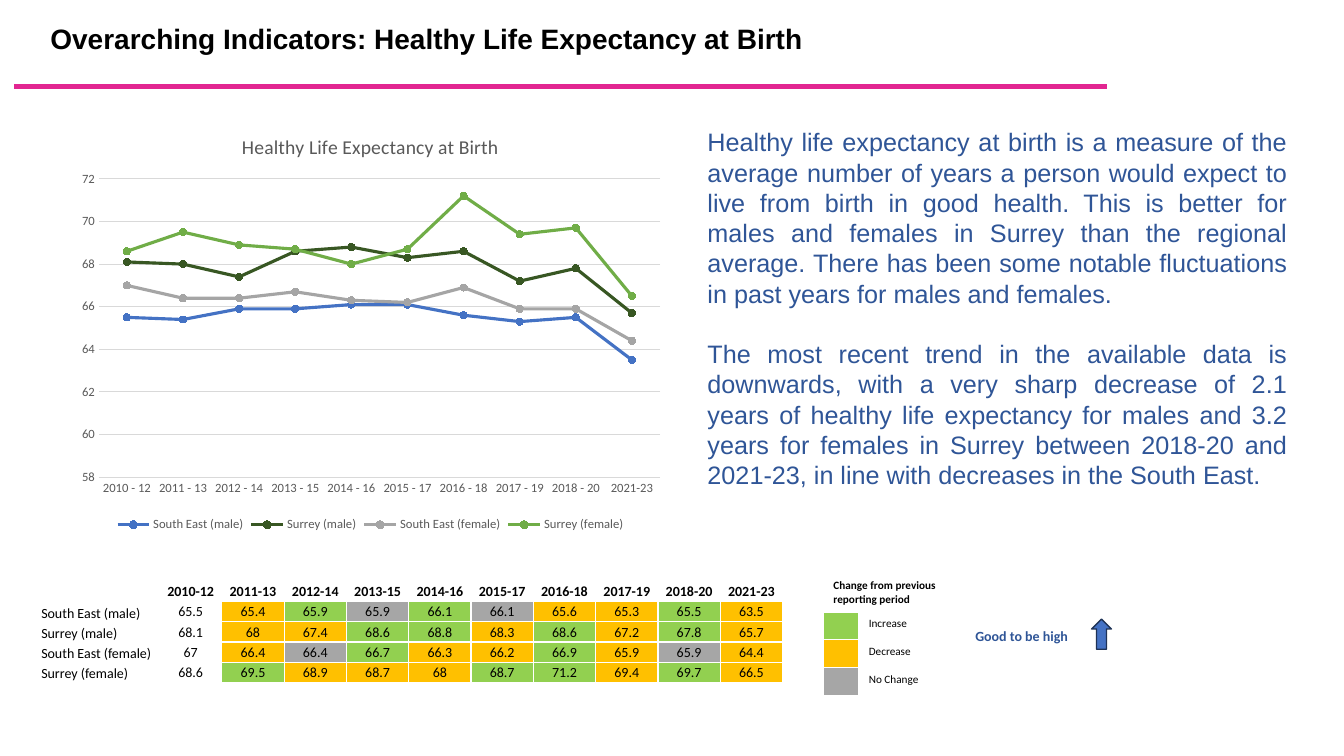
from collections import namedtuple

from lxml.etree import SubElement
from pptx import Presentation
from pptx.chart.data import CategoryChartData
from pptx.dml.color import RGBColor
from pptx.enum.chart import XL_CHART_TYPE, XL_LEGEND_POSITION, XL_MARKER_STYLE, XL_TICK_MARK
from pptx.enum.shapes import MSO_CONNECTOR, MSO_SHAPE
from pptx.enum.text import MSO_ANCHOR, PP_ALIGN
from pptx.oxml import parse_xml
from pptx.oxml.ns import nsdecls, qn
from pptx.util import Cm, Pt

BLACK = RGBColor(0x00, 0x00, 0x00)
WHITE = RGBColor(0xFF, 0xFF, 0xFF)
PINK = RGBColor(0xE2, 0x26, 0x91)
TEXT_BLUE = RGBColor(0x2F, 0x55, 0x97)
ARROW_BLUE = RGBColor(0x44, 0x72, 0xC4)
ARROW_EDGE = RGBColor(0x1E, 0x32, 0x56)
AXIS_GREY = RGBColor(0x59, 0x59, 0x59)
GRID_GREY = RGBColor(0xD9, 0xD9, 0xD9)
INCREASE = RGBColor(0x92, 0xD0, 0x50)
DECREASE = RGBColor(0xFF, 0xC0, 0x00)
NO_CHANGE = RGBColor(0xA6, 0xA6, 0xA6)

Box = namedtuple("Box", "left top width height")

PERIODS = ["2010-12", "2011-13", "2012-14", "2013-15", "2014-16",
           "2015-17", "2016-18", "2017-19", "2018-20", "2021-23"]
EXPECTANCY = {
    "South East (male)": [65.5, 65.4, 65.9, 65.9, 66.1, 66.1, 65.6, 65.3, 65.5, 63.5],
    "Surrey (male)": [68.1, 68, 67.4, 68.6, 68.8, 68.3, 68.6, 67.2, 67.8, 65.7],
    "South East (female)": [67, 66.4, 66.4, 66.7, 66.3, 66.2, 66.9, 65.9, 65.9, 64.4],
    "Surrey (female)": [68.6, 69.5, 68.9, 68.7, 68, 68.7, 71.2, 69.4, 69.7, 66.5],
}
SERIES_COLOURS = [ARROW_BLUE, RGBColor(0x38, 0x57, 0x23),
                  RGBColor(0xA5, 0xA5, 0xA5), RGBColor(0x70, 0xAD, 0x47)]
COMMENTARY = [
    "Healthy life expectancy at birth is a measure of the average number of years a person "
    "would expect to live from birth in good health. This is better for males and females in "
    "Surrey than the regional average. There has been some notable fluctuations in past years "
    "for males and females.",
    "The most recent trend in the available data is downwards, with a very sharp decrease of 2.1 "
    "years of healthy life expectancy for males and 3.2 years for females in Surrey between "
    "2018-20 and 2021-23, in line with decreases in the South East.",
]


def write(para, text, size=10, name="Calibri", colour=BLACK, bold=False, align=PP_ALIGN.LEFT):
    para.alignment = align
    span = para.add_run()
    span.text = text
    font = span.font
    font.size, font.name, font.bold = Pt(size), name, bold
    font.color.rgb = colour


def add_block(slide, box, shape_kind, fill, edge, weight):
    shape = slide.shapes.add_shape(shape_kind, *box)
    shape.shadow.inherit = False
    shape.fill.solid()
    shape.fill.fore_color.rgb = fill
    shape.line.color.rgb = edge
    shape.line.width = Pt(weight)
    return shape


def add_plain_table(slide, box, rows, columns):
    """Table with white cell borders and no banding."""
    table = slide.shapes.add_table(rows, columns, *box).table
    table.first_row = table.horz_banding = False
    for cell in table.iter_cells():
        properties = cell._tc.get_or_add_tcPr()
        for side in ("a:lnL", "a:lnR", "a:lnT", "a:lnB"):
            border = SubElement(properties, qn(side), w=str(Pt(1)))
            SubElement(SubElement(border, qn("a:solidFill")), qn("a:srgbClr"), val=str(WHITE))
        cell.fill.background()
        cell.text_frame.paragraphs[0].font.size = Pt(8)
    return table


def paint(cell, colour):
    cell.fill.solid()
    cell.fill.fore_color.rgb = colour


def add_heading(slide, box):
    rule = slide.shapes.add_connector(MSO_CONNECTOR.STRAIGHT, Cm(0.36), box.top + Cm(2.26),
                                      Cm(27.89), box.top + Cm(2.26))
    rule.line.color.rgb = PINK
    rule.line.width = Pt(3)
    SubElement(rule._element.spPr, qn("a:effectLst"))
    banner = add_block(slide, box, MSO_SHAPE.RECTANGLE, WHITE, WHITE, 0.75)
    banner.text_frame.vertical_anchor = MSO_ANCHOR.MIDDLE
    para = banner.text_frame.paragraphs[0]
    para.line_spacing = 0.9
    write(para, "Overarching Indicators: Healthy Life Expectancy at Birth",
          size=20, name="Arial", bold=True, align=PP_ALIGN.JUSTIFY)


def add_commentary(slide, box):
    frame = slide.shapes.add_textbox(*box).text_frame
    frame.word_wrap = True
    for index, text in enumerate(COMMENTARY):
        para = frame.paragraphs[0] if index == 0 else frame.add_paragraph()
        if index:
            para.space_before = Pt(21.6)
        write(para, text, size=18, name="Arial", colour=TEXT_BLUE, align=PP_ALIGN.JUSTIFY)


def style_font(font, size):
    font.size, font.name, font.bold = Pt(size), "Calibri", False
    font.color.rgb = AXIS_GREY


def add_trend_chart(slide, box):
    chart_data = CategoryChartData(number_format="General")
    chart_data.categories = [period.replace("-", " - ") for period in PERIODS[:-1]] + PERIODS[-1:]
    for name, values in EXPECTANCY.items():
        chart_data.add_series(name, values)
    chart = slide.shapes.add_chart(XL_CHART_TYPE.LINE_MARKERS, *box, chart_data).chart
    style_font(chart.font, 10)

    # Title and legend
    chart.has_title = True
    title = chart.chart_title.text_frame
    title.text = "Healthy Life Expectancy at Birth"
    style_font(title.paragraphs[0].runs[0].font, 14)
    chart.has_legend = True
    chart.legend.position = XL_LEGEND_POSITION.BOTTOM
    chart.legend.include_in_layout = False
    style_font(chart.legend.font, 9)

    # Axes
    for axis in (chart.category_axis, chart.value_axis):
        axis.major_tick_mark = axis.minor_tick_mark = XL_TICK_MARK.NONE
        style_font(axis.tick_labels.font, 9)
    scale = chart.value_axis
    scale.minimum_scale, scale.maximum_scale, scale.major_unit = 58, 72, 2
    scale.format.line.fill.background()
    for line in (chart.category_axis.format.line, scale.major_gridlines.format.line):
        line.color.rgb = GRID_GREY
        line.width = Pt(0.75)

    # Series
    chart.plots[0].vary_by_categories = False
    for series, colour in zip(chart.plots[0].series, SERIES_COLOURS):
        series.smooth = False
        series.format.line.color.rgb = colour
        series.format.line.width = Pt(2.25)
        series.marker.style = XL_MARKER_STYLE.CIRCLE
        series.marker.size = 5
        series.marker.format.fill.solid()
        series.marker.format.fill.fore_color.rgb = colour
        series.marker.format.line.color.rgb = colour

    # Plot area, as shares of the chart
    plot_area = chart._chartSpace.chart.plotArea
    for layout in plot_area.findall(qn("c:layout")):
        plot_area.remove(layout)
    shares = "".join(f'<c:{key} val="{value}"/>' for key, value in
                     [("layoutTarget", "inner"), ("xMode", "edge"), ("yMode", "edge"),
                      ("x", 0.05), ("y", 0.15), ("w", 0.93), ("h", 0.71)])
    plot_area.insert(0, parse_xml(f'<c:layout {nsdecls("c")}><c:manualLayout>{shares}'
                                  '</c:manualLayout></c:layout>'))


def change_colour(previous, value):
    if value == previous:
        return NO_CHANGE
    return INCREASE if value > previous else DECREASE


def add_value_table(slide, box):
    table = add_plain_table(slide, box, len(EXPECTANCY) + 1, len(PERIODS) + 1)
    label_width = Cm(3)
    for index, column in enumerate(table.columns):
        column.width = (box.width - label_width) // len(PERIODS) if index else label_width
    for cell in table.iter_cells():
        cell.margin_left = cell.margin_right = cell.margin_top = Cm(0.02)
        cell.margin_bottom = 0
        cell.vertical_anchor = MSO_ANCHOR.MIDDLE
    for column, period in enumerate(PERIODS, 1):
        write(table.cell(0, column).text_frame.paragraphs[0], period,
              bold=True, align=PP_ALIGN.CENTER)
    for row, (name, values) in enumerate(EXPECTANCY.items(), 1):
        label = table.cell(row, 0)
        label.vertical_anchor = MSO_ANCHOR.BOTTOM
        write(label.text_frame.paragraphs[0], name)
        for column, value in enumerate(values, 1):
            cell = table.cell(row, column)
            write(cell.text_frame.paragraphs[0], str(value), align=PP_ALIGN.CENTER)
            if column > 1:
                paint(cell, change_colour(values[column - 2], value))


def add_change_key(slide, box):
    entries = [("Increase", INCREASE), ("Decrease", DECREASE), ("No Change", NO_CHANGE)]
    table = add_plain_table(slide, box, len(entries) + 1, 2)
    table.columns[0].width = Cm(0.89)
    table.columns[1].width = box.width - Cm(0.89)
    header = table.cell(0, 0)
    header.merge(table.cell(0, 1))
    write(header.text_frame.paragraphs[0], "Change from previous reporting period",
          size=8, bold=True)
    table.rows[0].height = Cm(0.97)
    for row, (text, colour) in enumerate(entries, 1):
        table.rows[row].height = Cm(0.7)
        paint(table.cell(row, 0), colour)
        write(table.cell(row, 1).text_frame.paragraphs[0], text, size=8)


def add_direction(slide, box):
    frame = slide.shapes.add_textbox(box.left, box.top + Cm(0.1), box.width, Cm(0.69)).text_frame
    frame.word_wrap = True
    write(frame.paragraphs[0], "Good to be high", colour=TEXT_BLUE, bold=True)
    arrow = Box(box.left + Cm(3.18), box.top, Cm(0.5), box.height)
    add_block(slide, arrow, MSO_SHAPE.UP_ARROW, ARROW_BLUE, ARROW_EDGE, 1)


def main():
    deck = Presentation()
    deck.slide_width, deck.slide_height = Cm(33.87), Cm(19.05)
    slide = deck.slides.add_slide(deck.slide_layouts[6])
    add_commentary(slide, Box(Cm(17.58), Cm(3.07), Cm(15.11), Cm(10.26)))
    add_heading(slide, Box(Cm(1.02), Cm(-0.08), Cm(30.63), Cm(2.18)))
    add_change_key(slide, Box(Cm(20.75), Cm(14.45), Cm(4.04), Cm(3.07)))
    add_value_table(slide, Box(Cm(1.02), Cm(14.65), Cm(18.7), Cm(2.55)))
    add_direction(slide, Box(Cm(24.33), Cm(15.6), Cm(5.92), Cm(0.76)))
    add_trend_chart(slide, Box(Cm(1.73), Cm(2.92), Cm(15.21), Cm(10.59)))
    deck.save("out.pptx")


if __name__ == "__main__":
    main()
